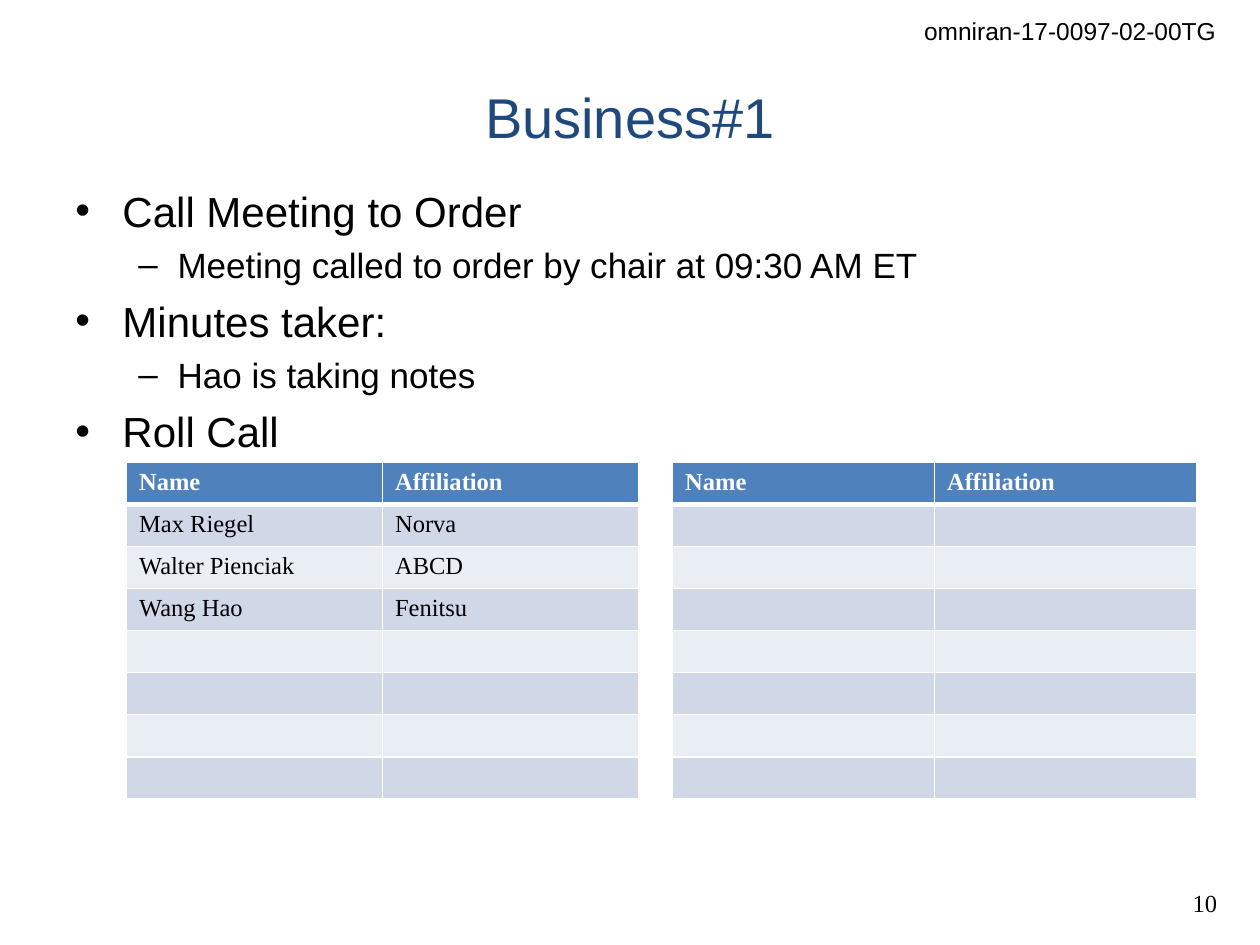
from lxml import etree
from pptx import Presentation
from pptx import util as u
from pptx.dml.color import RGBColor
from pptx.enum import text
from pptx.oxml import ns

SANS, SERIF = "Arial", "Times New Roman"
BLACK, WHITE, NAVY, BLUE = "000000", "FFFFFF", "1F497D", "4F81BD"
BANDS = ("D0D8E8", "E9EDF4")
# size, left indent and hanging indent in cm, bullet
LEVELS = ((24, 0.95, 0.95, "•"), (20, 2.06, 0.79, "–"))


def rgb(value):
    return RGBColor.from_string(value)


def sub(parent, tag, **attrs):
    return etree.SubElement(parent, ns.qn(tag), **attrs)


class SlideBuilder:
    """Holds the presentation, its current slide and the text style."""

    def __init__(self):
        self.prs = Presentation()
        self.prs.slide_width, self.prs.slide_height = u.Cm(25.4), u.Cm(19.05)
        self.s = self.prs.slides.add_slide(self.prs.slide_layouts[6])

    def style(self, p, size, font=SANS, color=BLACK, bold=False):
        for r in p.runs:
            r.font.size, r.font.name, r.font.bold = u.Pt(size), font, bold
            r.font.color.rgb = rgb(color)

    def textbox(self, box, words, size, align, font=SANS, color=BLACK,
                anchor=text.MSO_ANCHOR.TOP, wrap=True):
        sp = self.s.shapes.add_textbox(*map(u.Cm, box))
        tf = sp.text_frame
        tf.word_wrap, tf.vertical_anchor = wrap, anchor
        tf.text = words
        p = tf.paragraphs[0]
        p.alignment = align
        self.style(p, size, font, color)

    def bullets(self, box, items):
        tf = self.s.shapes.add_textbox(*map(u.Cm, box)).text_frame
        tf.word_wrap = True
        tf.text = "\n".join(words for _, words in items)
        for p, (level, _) in zip(tf.paragraphs, items):
            size, left, hang, mark = LEVELS[level]
            p.level = level
            p.space_before = u.Pt(round(size * 0.23, 1))
            self.style(p, size)
            pPr = p._p.get_or_add_pPr()
            pPr.set("marL", str(u.Cm(left)))
            pPr.set("indent", str(-u.Cm(hang)))
            sub(pPr, "a:buFont", typeface=SANS)
            sub(pPr, "a:buChar", char=mark)

    def cell(self, cell, words, fill, color, header):
        p = cell.text_frame.paragraphs[0]
        p.text = words
        self.style(p, 14, SERIF, color, header)
        if not words:
            sub(p._p, "a:endParaRPr", sz="1400")
        tcPr = cell._tc.get_or_add_tcPr()
        for side in "LRTB":
            width = 3 if header and side == "B" else 1
            ln = sub(tcPr, f"a:ln{side}", w=str(u.Pt(width)))
            sub(sub(ln, "a:solidFill"), "a:srgbClr", val=WHITE)
        cell.fill.solid()
        cell.fill.fore_color.rgb = rgb(fill)

    def table(self, left, top, widths, row_height, rows, gap):
        """Draws banded rows under a header; the gap column stays white."""
        table = self.s.shapes.add_table(
            len(rows), len(widths), u.Cm(left), u.Cm(top),
            u.Cm(sum(widths)), u.Cm(row_height * len(rows))).table
        for column, width in zip(table.columns, widths):
            column.width = u.Cm(width)
        for i, row in enumerate(rows):
            table.rows[i].height = u.Cm(row_height)
            header = i == 0
            band = BLUE if header else BANDS[(i - 1) % 2]
            for j, words in enumerate(row):
                self.cell(table.cell(i, j), words, WHITE if j == gap else band,
                          WHITE if header else BLACK, header)


def main():
    b = SlideBuilder()
    right = text.PP_ALIGN.RIGHT
    b.textbox((18.34, 0.2, 6.43, 0.86), "omniran-17-0097-02-00TG", 14, right,
              wrap=False)
    b.textbox((23.7, 17.78, 1.09, 0.86), "10", 14, right, SERIF, wrap=False)
    b.textbox((1.27, 0.76, 22.86, 3.18), "Business#1", 32,
              text.PP_ALIGN.CENTER, color=NAVY, anchor=text.MSO_ANCHOR.MIDDLE)
    b.bullets((1.27, 3.61, 22.86, 14.81), [
        (0, "Call Meeting to Order"),
        (1, "Meeting called to order by chair at 09:30 AM ET"),
        (0, "Minutes taker:"),
        (1, "Hao is taking notes"),
        (0, "Roll Call"),
    ])

    heading = ("Name", "Affiliation")
    attendees = [("Max Riegel", "Norva"), ("Walter Pienciak", "ABCD"),
                 ("Wang Hao", "Fenitsu")]
    rows = [(*heading, "", *heading)]
    rows += [(*person, "", "", "") for person in attendees]
    rows += [("",) * 5] * 4
    b.table(2.55, 9.32, (5.16, 5.16, 0.69, 5.28, 5.28), 0.81, rows, gap=2)
    b.prs.save("out.pptx")


if __name__ == "__main__":
    main()
